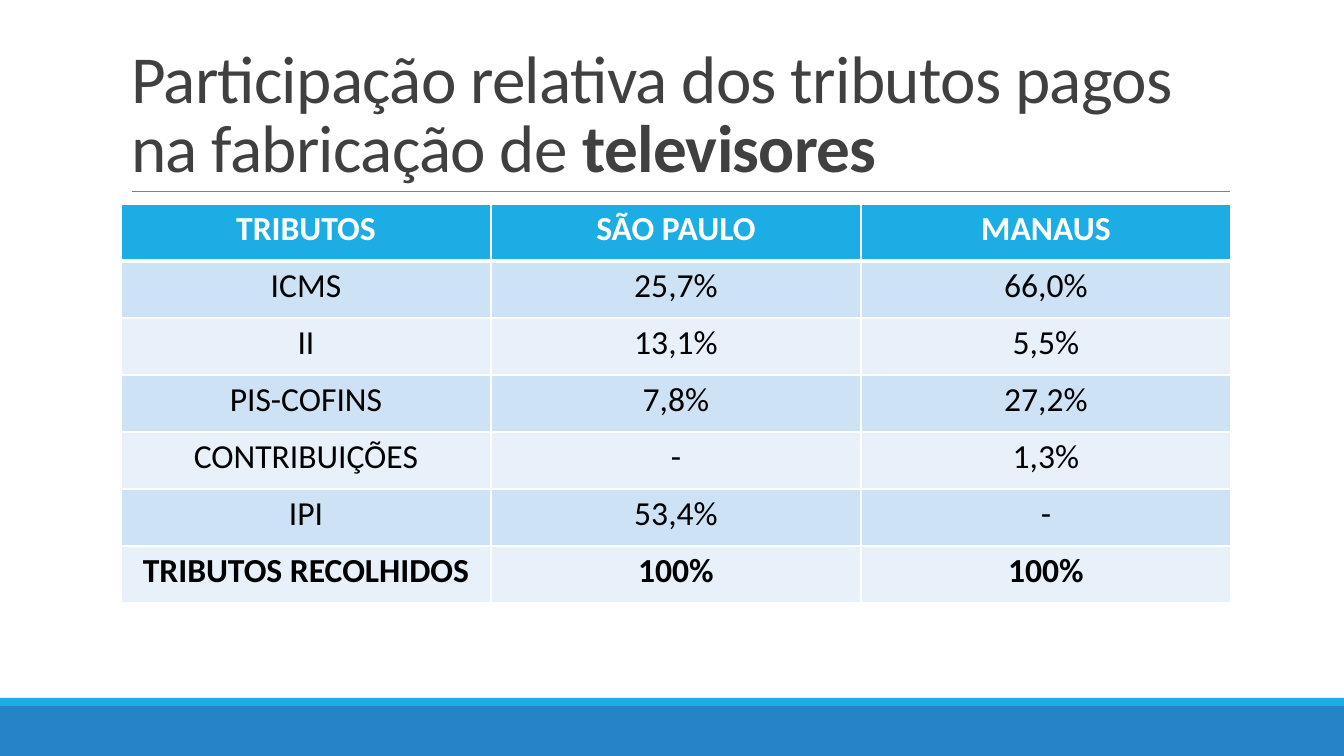
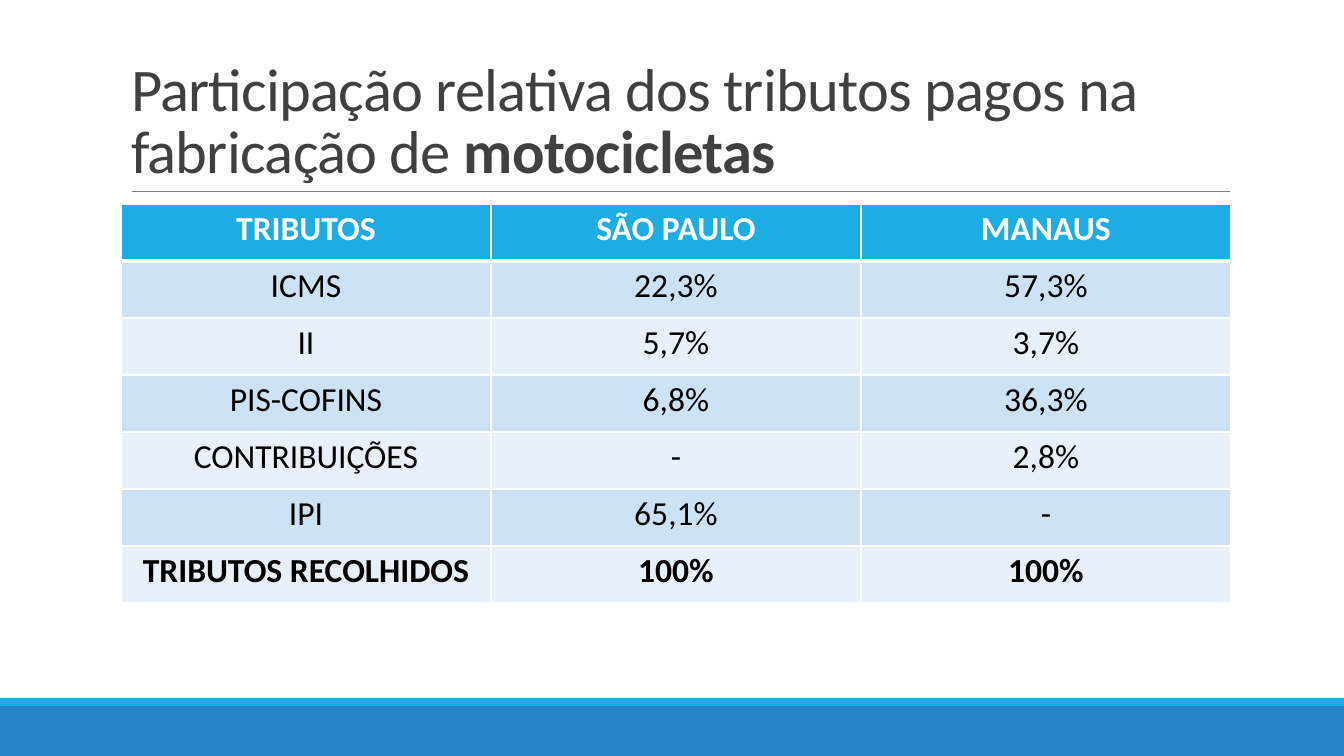
import pptx
import pptx.dml.color
import pptx.enum.dml
import pptx.enum.shapes
import pptx.enum.text
import pptx.oxml
import pptx.oxml.ns
import pptx.util
import lxml.etree

RGBColor = pptx.dml.color.RGBColor
Pt = pptx.util.Pt
PP_ALIGN = pptx.enum.text.PP_ALIGN

WHITE = RGBColor(0xFF, 0xFF, 0xFF)
BLACK = RGBColor(0x00, 0x00, 0x00)
TITLE_GREY = RGBColor(0x40, 0x40, 0x40)
RULE_GREY = RGBColor(0x80, 0x80, 0x80)
BLUE = RGBColor(0x26, 0x83, 0xC6)
CYAN = RGBColor(0x1C, 0xAD, 0xE4)
ROW_FILLS = [RGBColor(0xE8, 0xF1, 0xFA), RGBColor(0xCD, 0xE3, 0xF5)]

FONT = "Calibri"
PAGE_WIDTH, PAGE_HEIGHT = 1344, 756
EMU_PER_PX = 12192000 / PAGE_WIDTH
TITLE_BOX = {"left": 121, "top": 31, "width": 1109, "height": 160}
TITLE_FRAME = {
    "vertical_anchor": pptx.enum.text.MSO_ANCHOR.BOTTOM,
    "auto_size": pptx.enum.text.MSO_AUTO_SIZE.NONE,
    "word_wrap": True,
}
TITLE_PARA = {"alignment": PP_ALIGN.LEFT, "line_spacing": 0.85}
BANDS = [(706, 50, BLUE), (698, 8, CYAN)]
RULE_LEFT, RULE_RIGHT, RULE_TOP = 132, 1230, 191
TABLE_LEFT, TABLE_TOP = 121, 204
COLUMN_WIDTH, ROW_HEIGHT = 370, 57

TITLE_START = "Participação relativa dos tributos pagos na fabricação de "
HEADINGS = ["TRIBUTOS", "SÃO PAULO", "MANAUS"]
TAXES = ["ICMS", "II", "PIS-COFINS", "CONTRIBUIÇÕES", "IPI", "TRIBUTOS RECOLHIDOS"]
PAGES = [
    ("televisores", 48,
     ["25,7%", "13,1%", "7,8%", "-", "53,4%", "100%"],
     ["66,0%", "5,5%", "27,2%", "1,3%", "-", "100%"]),
    ("motocicletas", 43.2,
     ["22,3%", "5,7%", "6,8%", "-", "65,1%", "100%"],
     ["57,3%", "3,7%", "36,3%", "2,8%", "-", "100%"]),
]


def px(length):
    return pptx.util.Emu(round(length * EMU_PER_PX))


def set_format(target, values):
    for name, value in values.items():
        setattr(target, name, value)


def add_span(para, text, size, color, bold):
    span = para.add_run()
    span.text = text
    set_format(span.font, {"name": FONT, "size": Pt(size), "bold": bold})
    span.font.color.rgb = color


def add_band(page, top, height, color):
    band = page.shapes.add_shape(
        pptx.enum.shapes.MSO_SHAPE.RECTANGLE, 0, px(top), px(PAGE_WIDTH), px(height))
    band.shadow.inherit = False
    band.fill.solid()
    band.fill.fore_color.rgb = color
    band.line.fill.background()
    return band


def add_rule(page):
    rule = page.shapes.add_connector(
        pptx.enum.shapes.MSO_CONNECTOR.STRAIGHT,
        px(RULE_LEFT), px(RULE_TOP), px(RULE_RIGHT), px(RULE_TOP))
    rule.line.color.rgb = RULE_GREY
    rule.line.width = Pt(0.5)
    properties = rule.element.xpath("./p:spPr")[0]
    lxml.etree.SubElement(properties, pptx.oxml.ns.qn("a:effectLst"))
    return rule


def furnish_layout(layout, page):
    set_format(layout.placeholders[0], {name: px(value) for name, value in TITLE_BOX.items()})
    furniture = [add_band(page, *band) for band in BANDS] + [add_rule(page)]
    for number, shape in enumerate(furniture, 101):
        shape.element.xpath(".//p:cNvPr")[0].set("id", str(number))
        layout.shapes.element.append(shape.element)


def write_title(page, product, size):
    title = page.shapes.title
    set_format(title.text_frame, TITLE_FRAME)
    para = title.text_frame.paragraphs[0]
    set_format(para, TITLE_PARA)
    add_span(para, TITLE_START, size, TITLE_GREY, False)
    add_span(para, product, size, TITLE_GREY, True)
    for properties in title.element.xpath(".//a:rPr"):
        properties.set("spc", "-50")


def add_borders(properties, row):
    widths = {"L": 1, "R": 1, "T": 3 if row == 1 else 1, "B": 3 if row == 0 else 1}
    for position, (side, width) in enumerate(widths.items()):
        border = pptx.oxml.parse_xml(
            f'<a:ln{side} {pptx.oxml.ns.nsdecls("a")} w="{Pt(width)}">'
            f'<a:solidFill><a:srgbClr val="{WHITE}"/></a:solidFill></a:ln{side}>')
        properties.insert(position, border)


def add_tax_table(page, rows):
    columns = len(HEADINGS)
    frame = page.shapes.add_table(
        len(rows), columns, px(TABLE_LEFT), px(TABLE_TOP),
        px(COLUMN_WIDTH * columns), px(ROW_HEIGHT * len(rows)))
    for number, values in enumerate(rows):
        header = number == 0
        for column, text in enumerate(values):
            cell = frame.table.cell(number, column)
            cell.fill.solid()
            cell.fill.fore_color.rgb = CYAN if header else ROW_FILLS[number % 2]
            para = cell.text_frame.paragraphs[0]
            para.alignment = PP_ALIGN.CENTER
            add_span(para, text, 24, WHITE if header else BLACK,
                     number in (0, len(rows) - 1))
    for index, properties in enumerate(frame.element.xpath(".//a:tcPr")):
        add_borders(properties, index // columns)


def main():
    deck = pptx.Presentation()
    set_format(deck, {"slide_width": px(PAGE_WIDTH), "slide_height": px(PAGE_HEIGHT)})
    layout = deck.slide_layouts.get_by_name("Title Only")
    for product, title_size, sao_paulo, manaus in PAGES:
        page = deck.slides.add_slide(layout)
        if len(deck.slides) == 1:
            furnish_layout(layout, page)
        write_title(page, product, title_size)
        add_tax_table(page, [HEADINGS, *zip(TAXES, sao_paulo, manaus)])
    deck.save("out.pptx")


if __name__ == "__main__":
    main()
